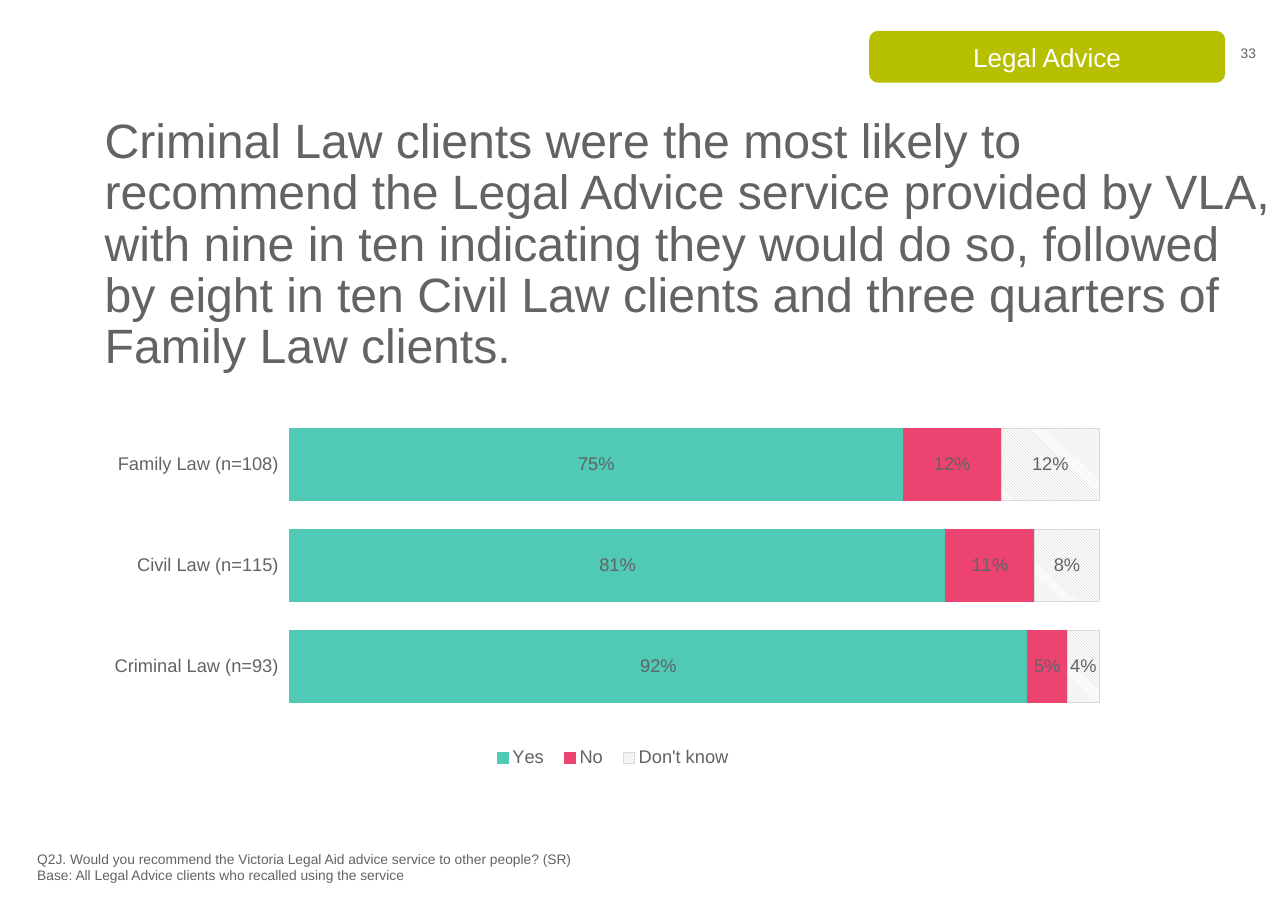
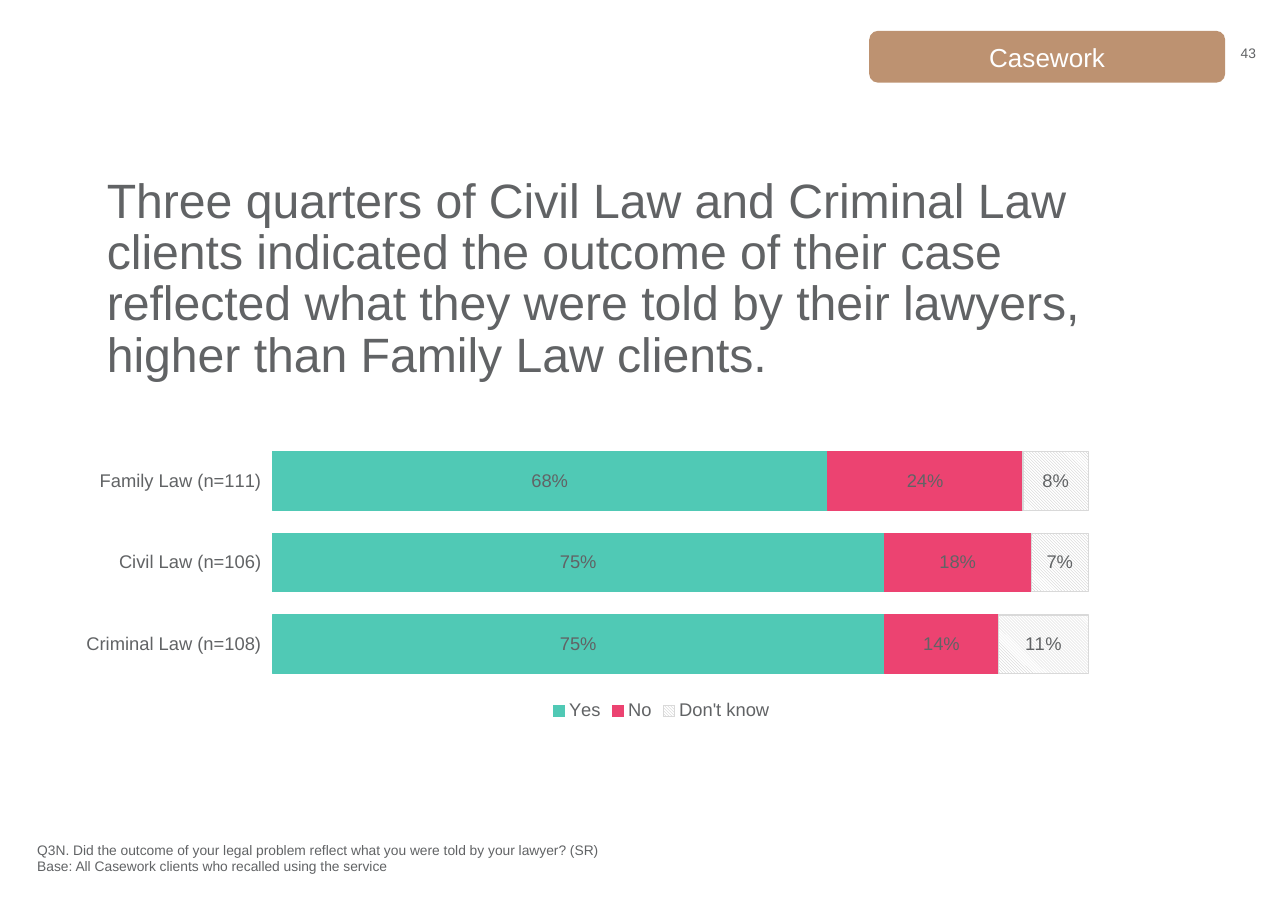
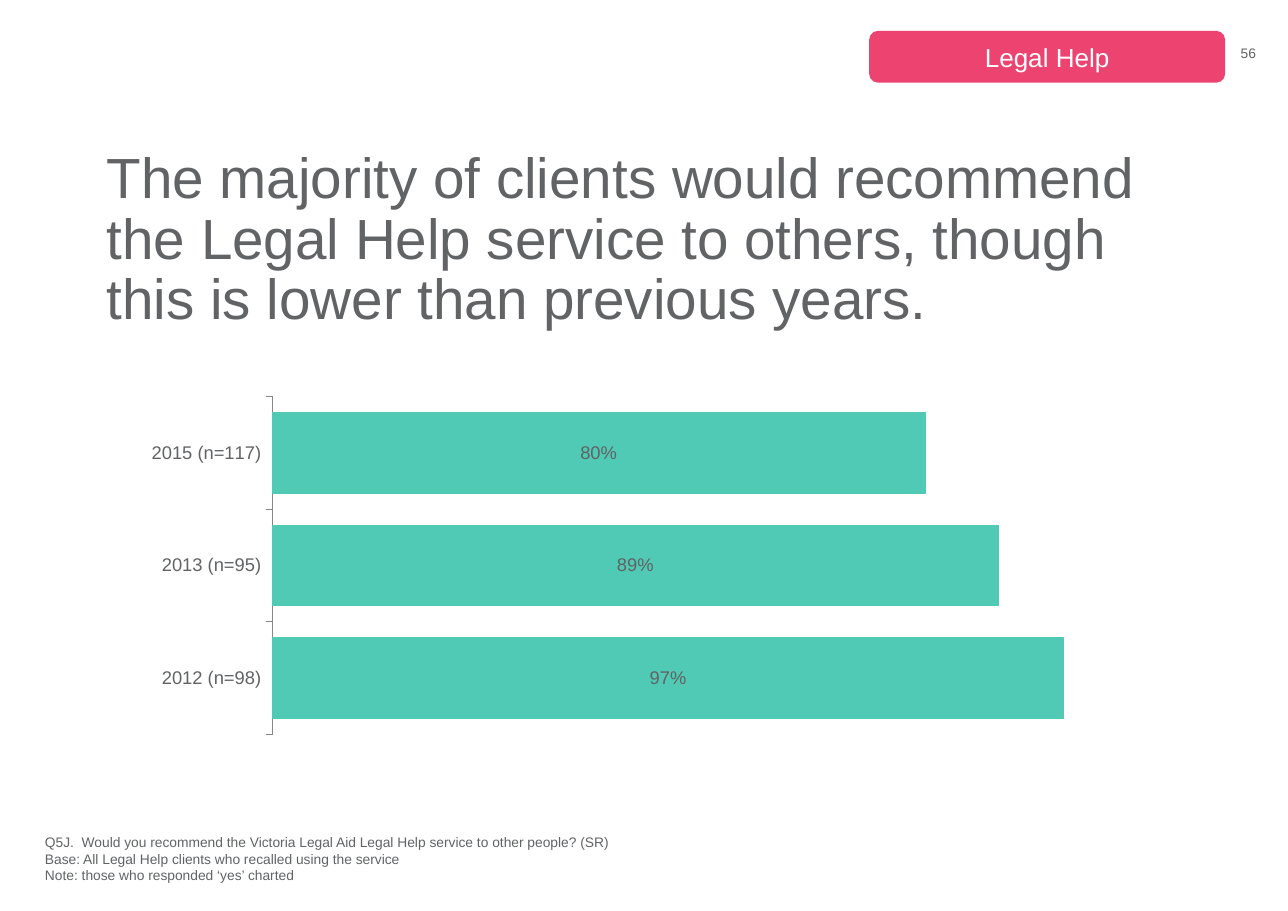
"""Builds three client survey slides, each with a title, section badge, bar chart and source note."""
from lxml import etree
from pptx import Presentation
from pptx import util as u
from pptx.chart.data import CategoryChartData
from pptx.dml.color import RGBColor
from pptx.enum import chart as ch, dml, shapes, text

WIDTH, HEIGHT = u.Inches(11.69), u.Inches(8.27)
FONT, GREY, WHITE, AXIS = "Arial", "616365", "FFFFFF", "868686"
TEAL, PINK, LIME, TAN = "50C9B5", "EC4371", "B6BF00", "BD9271"
HATCH, HATCH_EDGE = "BFBFBF", "D9D9D9"
BADGE, PAGE = (67.49, 3.39, 27.63, 5.68), (91.36, 4.72, 6.16, 2.3)

SLIDES = [
    dict(
        section="Legal Advice", colour=LIME, page="33",
        title="Criminal Law clients were the most likely to recommend the Legal Advice service "
              "provided by VLA, with nine in ten indicating they would do so, followed by eight "
              "in ten Civil Law clients and three quarters of Family Law clients.",
        title_at=(7.27, 18.62, 92.81, 16.69), title_size=31.5,
        note=["Q2J. Would you recommend the Victoria Legal Aid advice service to other people? (SR)",
              "Base: All Legal Advice clients who recalled using the service"],
        note_at=(2.05, 92.74, 50.04, 4.84),
        kind=ch.XL_CHART_TYPE.BAR_STACKED_100, top=1,
        chart_at=(8.9, 45.22, 78.1, 40.99), plot=(17, 0.6, 80.9, 81),
        legend=(36.3, 88.6, 26, 8),
        categories=["Criminal Law (n=93)", "Civil Law (n=115)", "Family Law (n=108)"],
        series={"Yes": (0.92, 0.81, 0.75), "No": (0.05, 0.11, 0.12),
                "Don't know": (0.04, 0.08, 0.12)},
    ),
    dict(
        section="Casework", colour=TAN, page="43",
        title="Three quarters of Civil Law and Criminal Law clients indicated the outcome of "
              "their case reflected what they were told by their lawyers, higher than Family "
              "Law clients.",
        title_at=(7.44, 22.37, 86.4, 16.69), title_size=31.5,
        note=["Q3N. Did the outcome of your legal problem reflect what you were told by your lawyer? (SR)",
              "Base: All Casework clients who recalled using the service"],
        note_at=(2.05, 91.78, 50.04, 4.84),
        kind=ch.XL_CHART_TYPE.BAR_STACKED_100, top=1.2,
        chart_at=(5.56, 48.13, 91.62, 31.44), plot=(17, 0.6, 83, 85.5),
        legend=None,
        categories=["Criminal Law (n=108)", "Civil Law (n=106)", "Family Law (n=111)"],
        series={"Yes": (0.75, 0.75, 0.68), "No": (0.14, 0.18, 0.24),
                "Don't know": (0.11, 0.07, 0.08)},
    ),
    dict(
        section="Legal Help", colour=PINK, page="56",
        title="The majority of clients would recommend the Legal Help service to others, though "
              "this is lower than previous years.",
        title_at=(7.44, 18.14, 84.35, 16.69), title_size=37,
        note=["Q5J.  Would you recommend the Victoria Legal Aid Legal Help service to other people? (SR)",
              "Base: All Legal Help clients who recalled using the service",
              "Note: those who responded ‘yes’ charted"],
        note_at=(2.65, 90.93, 50.04, 6.77),
        kind=ch.XL_CHART_TYPE.BAR_STACKED, top=1.2,
        chart_at=(5.56, 43.29, 91.62, 37.48), plot=(17, 0.6, 83, 99.1),
        legend=None,
        categories=["2012 (n=98)", "2013 (n=95)", "2015 (n=117)"],
        series={"Series 1": (0.97, 0.89, 0.8)},
    ),
]


def rgb(value):
    """Turn a hex string into a colour."""
    return RGBColor.from_string(value)


def place(shares):
    """Turn percentages of the slide into left, top, width and height."""
    return [int(side * share / 100) for side, share in zip((WIDTH, HEIGHT) * 2, shares)]


def set_font(font, size, colour=GREY):
    """Apply the deck's typeface at a given size and colour."""
    font.name, font.size, font.color.rgb = FONT, u.Pt(size), rgb(colour)


def write(box, lines, size, colour=GREY, align=text.PP_ALIGN.LEFT,
          anchor=text.MSO_ANCHOR.MIDDLE, margins=(0.1, 0.05), spacing=None,
          fit=text.MSO_AUTO_SIZE.NONE):
    """Fill a shape with formatted paragraphs."""
    frame = box.text_frame
    frame.text = "\n".join(lines)
    frame.word_wrap, frame.auto_size, frame.vertical_anchor = True, fit, anchor
    frame.margin_left = frame.margin_right = u.Inches(margins[0])
    frame.margin_top = frame.margin_bottom = u.Inches(margins[1])
    for para in frame.paragraphs:
        para.alignment = align
        para.space_before = u.Pt(0)
        if spacing:
            para.line_spacing = spacing
        for span in para.runs:
            set_font(span.font, size, colour)


def set_layout(parent, index, shares, inner=False):
    """Fix the place of a chart part, in percentages of the chart."""
    space = parent.nsmap["c"]
    for old in parent.findall(f"{{{space}}}layout"):
        parent.remove(old)
    layout = etree.Element(f"{{{space}}}layout")
    manual = etree.SubElement(layout, f"{{{space}}}manualLayout")
    settings = [("layoutTarget", "inner")] if inner else []
    settings += [("xMode", "edge"), ("yMode", "edge")]
    settings += [(key, str(round(share / 100, 4))) for key, share in zip("xywh", shares)]
    for key, value in settings:
        etree.SubElement(manual, f"{{{space}}}{key}").set("val", value)
    parent.insert(index, layout)


def paint(series, colour):
    """Colour a series, hatching it when it has no colour of its own."""
    fill, line = series.format.fill, series.format.line
    if colour:
        fill.solid()
        fill.fore_color.rgb = rgb(colour)
    else:
        fill.patterned()
        fill.pattern = dml.MSO_PATTERN.LIGHT_DOWNWARD_DIAGONAL
        fill.fore_color.rgb, fill.back_color.rgb = rgb(HATCH), rgb(WHITE)
    line.color.rgb = rgb(colour or HATCH_EDGE)
    line.width = u.Pt(0.75)
    labels = series.data_labels
    labels.show_value = True
    labels.number_format, labels.number_format_is_linked = "0%", False
    set_font(labels.font, 12)


def add_bars(slide, item):
    """Add the stacked bar chart."""
    data = CategoryChartData(number_format="0%")
    data.categories = item["categories"]
    for name, values in item["series"].items():
        data.add_series(name, values)
    chart = slide.shapes.add_chart(item["kind"], *place(item["chart_at"]), data).chart
    set_font(chart.font, 12)
    chart.has_title = False
    plot = chart.plots[0]
    plot.gap_width, plot.overlap, plot.vary_by_categories = 40, 100, False
    for series, colour in zip(plot.series, (TEAL, PINK, None)):
        paint(series, colour)

    several = len(item["series"]) > 1
    values, names = chart.value_axis, chart.category_axis
    values.minimum_scale, values.maximum_scale = 0, item["top"]
    values.has_major_gridlines = values.visible = False
    names.major_tick_mark = ch.XL_TICK_MARK.OUTSIDE
    if several:
        names.format.line.fill.background()
    else:
        names.format.line.color.rgb = rgb(AXIS)
    set_layout(chart.element.find(".//{*}plotArea"), 0, item["plot"], inner=True)

    chart.has_legend = several
    if several:
        chart.legend.position = ch.XL_LEGEND_POSITION.BOTTOM
        chart.legend.include_in_layout = False
        set_font(chart.legend.font, 12)
        if item["legend"]:
            set_layout(chart.element.find(".//{*}legend"), 1, item["legend"])


def add_slide(deck, item):
    """Add one slide with all its parts."""
    slide = deck.slides.add_slide(deck.slide_layouts[5])
    title = slide.shapes.title
    title.left, title.top, title.width, title.height = place(item["title_at"])
    write(title, [item["title"]], item["title_size"], spacing=0.89)
    write(slide.shapes.add_textbox(*place(PAGE)), [item["page"]], 9,
          align=text.PP_ALIGN.RIGHT, margins=(0, 0))
    write(slide.shapes.add_textbox(*place(item["note_at"])), item["note"], 9,
          anchor=text.MSO_ANCHOR.TOP, fit=text.MSO_AUTO_SIZE.SHAPE_TO_FIT_TEXT)
    add_bars(slide, item)
    badge = slide.shapes.add_shape(shapes.MSO_SHAPE.ROUNDED_RECTANGLE, *place(BADGE))
    badge.shadow.inherit = False
    badge.fill.solid()
    badge.fill.fore_color.rgb = rgb(item["colour"])
    badge.line.fill.background()
    write(badge, [item["section"]], 17, WHITE, align=text.PP_ALIGN.CENTER)


def main():
    """Build and save the deck."""
    deck = Presentation()
    deck.slide_width, deck.slide_height = WIDTH, HEIGHT
    for item in SLIDES:
        add_slide(deck, item)
    deck.save("out.pptx")


if __name__ == "__main__":
    main()
